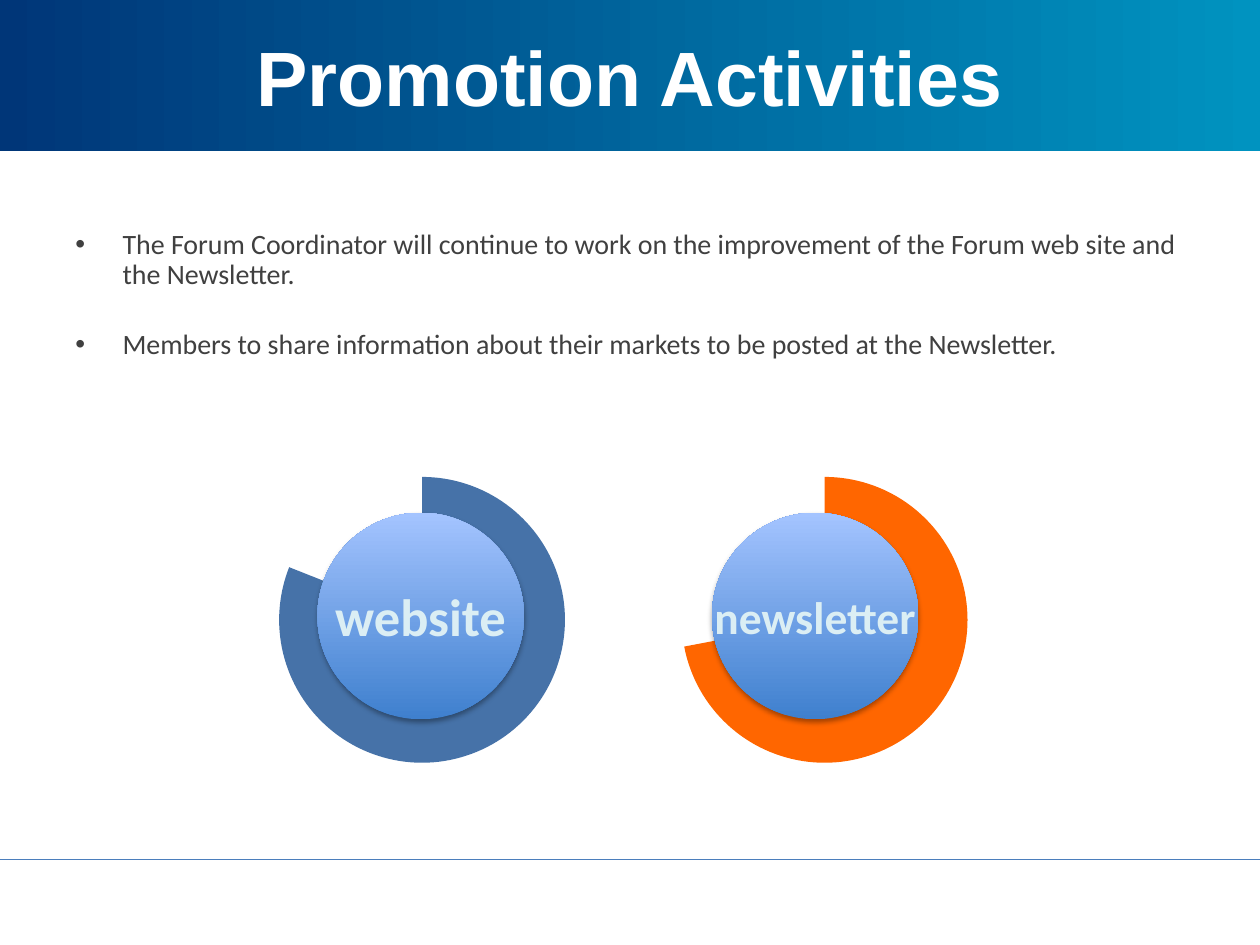
import pptx
import pptx.chart.data
import pptx.dml.color
import pptx.enum.chart
import pptx.enum.shapes
import pptx.enum.text
import pptx.oxml
import pptx.oxml.ns
import pptx.util
from dataclasses import dataclass
from lxml import etree

Pt = pptx.util.Pt
qn = pptx.oxml.ns.qn
SHAPE = pptx.enum.shapes.MSO_SHAPE
ALIGN = pptx.enum.text.PP_ALIGN


def rgb(value):
    return pptx.dml.color.RGBColor.from_string(value)


@dataclass(frozen=True)
class Theme:
    heading_font: str = "Arial"
    body_font: str = "Calibri"
    title_size: float = 44
    body_size: float = 16
    chart_size: float = 18
    white: str = "FFFFFF"
    body: str = "404040"
    label: str = "DBEEF4"
    rule: str = "4B7EBC"
    blue: str = "4672A8"
    orange: str = "FF6600"
    black: str = "000000"
    header: tuple = ("003678", "0093C0")
    disc: tuple = ("3F80CE", "A4C4FF")


class Deck:
    """Holds the theme and the slide being drawn."""

    def __init__(self, prs, theme):
        self.theme = theme
        self.s = prs.slides.add_slide(prs.slide_layouts[6])

    def run(self, p, text, size, color, font=None, bold=False):
        r = p.add_run()
        r.text = text
        r.font.name = font or self.theme.body_font
        r.font.size = Pt(size)
        r.font.bold = bold
        r.font.color.rgb = rgb(color)

    def text_frame(self, box):
        sp = self.s.shapes.add_textbox(*map(Pt, box))
        sp.text_frame.word_wrap = True
        return sp.text_frame

    def gradient_shape(self, kind, box, colors, angle):
        sp = self.s.shapes.add_shape(kind, *map(Pt, box))
        sp.shadow.inherit = False
        sp.line.fill.background()
        sp.fill.gradient()
        sp.fill.gradient_angle = angle
        for stop, color in zip(sp.fill.gradient_stops, colors):
            stop.color.rgb = rgb(color)
        return sp

    def rule(self, y, width):
        line = self.s.shapes.add_connector(
            pptx.enum.shapes.MSO_CONNECTOR.STRAIGHT, 0, Pt(y), Pt(width), Pt(y))
        line.line.color.rgb = rgb(self.theme.rule)
        line.line.width = Pt(0.75)
        etree.SubElement(line._element.spPr, qn("a:effectLst"))

    def title(self, text, box):
        tf = self.text_frame(box)
        tf.vertical_anchor = pptx.enum.text.MSO_ANCHOR.MIDDLE
        p = tf.paragraphs[0]
        p.alignment = ALIGN.CENTER
        self.run(p, text, self.theme.title_size, self.theme.white,
                 self.theme.heading_font, True)

    def bullets(self, items, box, gap):
        tf = self.text_frame(box)
        for i, item in enumerate(items):
            p = tf.add_paragraph() if i else tf.paragraphs[0]
            p.line_spacing = 0.9
            if i:
                p.space_before = Pt(gap)
            pPr = p._p.get_or_add_pPr()
            pPr.set("marL", str(Pt(27)))
            pPr.set("indent", str(-Pt(27)))
            etree.SubElement(pPr, qn("a:buFont"), typeface="Arial")
            etree.SubElement(pPr, qn("a:buChar"), char="•")
            self.run(p, item, self.theme.body_size, self.theme.body)

    def pie(self, share, color, box, diameter):
        """Pie of one visible slice, with the remainder left unfilled."""
        data = pptx.chart.data.CategoryChartData()
        data.categories = ["1", "2"]
        data.add_series("Series 1", (share, 100 - share))
        chart = self.s.shapes.add_chart(
            pptx.enum.chart.XL_CHART_TYPE.PIE, *map(Pt, box), data).chart
        chart.has_legend = False
        chart.has_title = False
        chart.font.name = self.theme.body_font
        chart.font.size = Pt(self.theme.chart_size)
        chart.font.color.rgb = rgb(self.theme.black)
        plot = chart.plots[0]
        plot.vary_by_categories = False
        filled, empty = (plot.series[0].points[i].format for i in range(2))
        filled.fill.solid()
        filled.fill.fore_color.rgb = rgb(color)
        empty.fill.background()
        for part in (filled, empty):
            part.line.fill.background()
        self.center_plot(chart, diameter / box[2], diameter / box[3])

    def center_plot(self, chart, w, h):
        area = chart._chartSpace.chart.plotArea
        for old in area.findall(qn("c:layout")):
            area.remove(old)
        layout = etree.Element(qn("c:layout"))
        manual = etree.SubElement(layout, qn("c:manualLayout"))
        settings = (("layoutTarget", "inner"), ("xMode", "edge"),
                    ("yMode", "edge"), ("x", (1 - w) / 2),
                    ("y", (1 - h) / 2), ("w", w), ("h", h))
        for tag, value in settings:
            etree.SubElement(manual, qn("c:" + tag), val=str(value))
        area.insert(0, layout)

    def disc(self, text, size, box):
        sp = self.gradient_shape(SHAPE.OVAL, box, self.theme.disc, 90)
        effects = sp._element.spPr.find(qn("a:effectLst"))
        shadow = etree.SubElement(
            effects, qn("a:outerShdw"), blurRad=str(Pt(3.1)),
            dist=str(Pt(1.8)), dir="5400000", rotWithShape="0")
        color = etree.SubElement(shadow, qn("a:srgbClr"), val=self.theme.black)
        etree.SubElement(color, qn("a:alpha"), val="35000")
        tf = sp.text_frame
        tf.word_wrap = False
        tf.vertical_anchor = pptx.enum.text.MSO_ANCHOR.MIDDLE
        p = tf.paragraphs[0]
        p.alignment = ALIGN.CENTER
        self.run(p, text, size, self.theme.label, bold=True)


def main():
    prs = pptx.Presentation()
    prs.slide_width, prs.slide_height = Pt(720), Pt(540)
    theme = Theme()
    deck = Deck(prs, theme)

    deck.rule(491, 720)
    deck.gradient_shape(SHAPE.RECTANGLE, (0, 0, 720, 86.6), theme.header, 0)
    deck.bullets(
        ["The Forum Coordinator will continue to work on the improvement "
         "of the Forum web site and the Newsletter.",
         "Members to share information about their markets to be posted "
         "at the Newsletter."],
        (36, 128, 648, 344), 23)

    # name, text size, share, ring colour, chart left, chart width, disc left
    dials = [("website", 30, 81, theme.blue, 97.2, 288, 181.4),
             ("newsletter", 26, 72, theme.orange, 324, 294.5, 406.8)]
    for name, size, share, color, left, width, disc_left in dials:
        deck.pie(share, color, (left, 262.8, width, 182.9), 163.4)
        deck.disc(name, size, (disc_left, 293, 118, 118))

    deck.title("Promotion Activities", (36, 0, 648, 86.4))
    prs.save("out.pptx")


if __name__ == "__main__":
    main()
